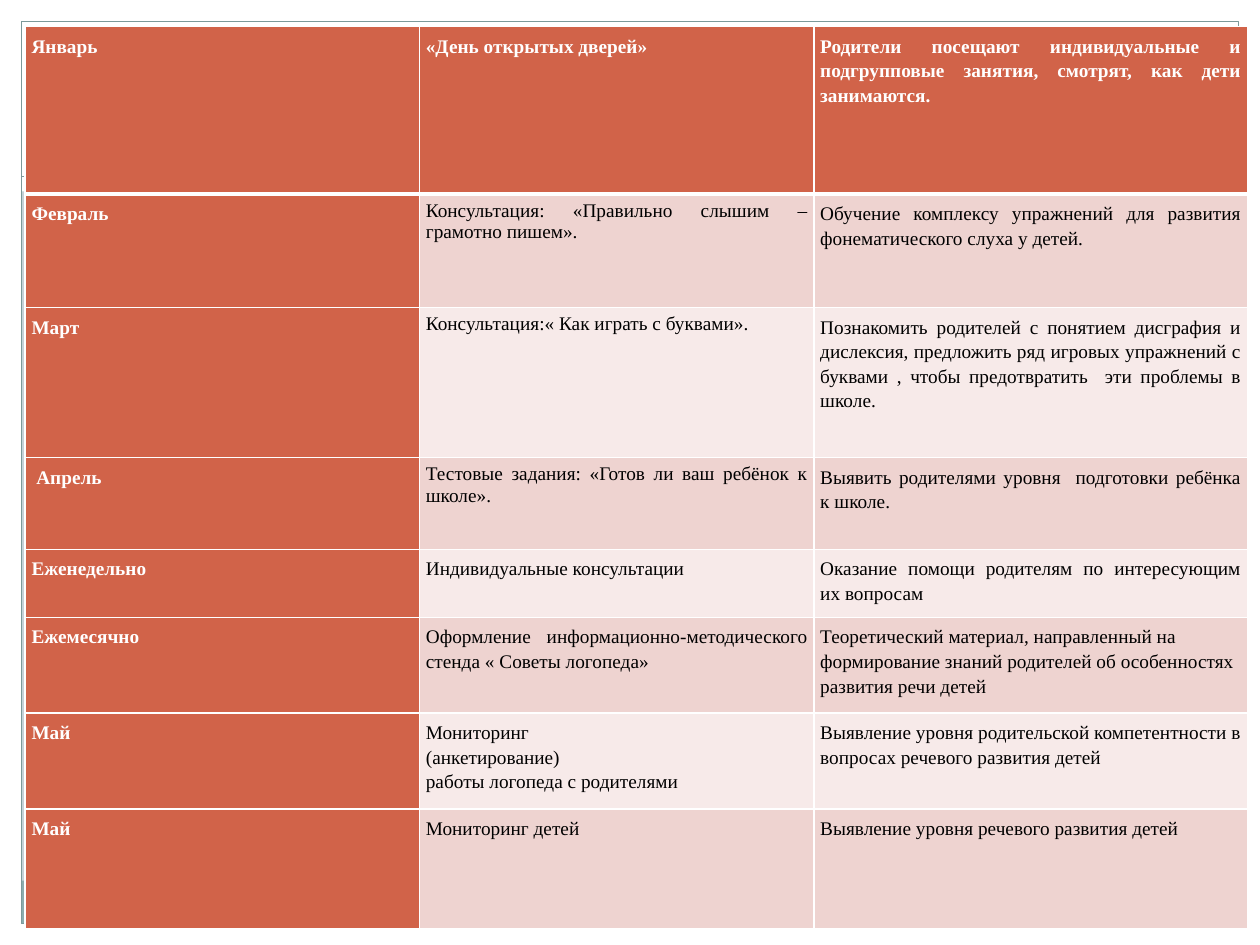
from lxml import etree
from pptx import Presentation
from pptx.dml.color import RGBColor
from pptx.enum.dml import MSO_LINE
from pptx.enum.shapes import MSO_CONNECTOR, MSO_SHAPE
from pptx.enum.text import PP_ALIGN
from pptx.oxml.ns import qn
from pptx.util import Inches, Pt

RECTANGLE = MSO_SHAPE.RECTANGLE
STRAIGHT = MSO_CONNECTOR.STRAIGHT
DASH = MSO_LINE.SQUARE_DOT
JUSTIFY, LEFT = PP_ALIGN.JUSTIFY, PP_ALIGN.LEFT

WIDTH, HEIGHT = 10, 7.5
MARGIN = 0.17
WHITE, BLACK, ACCENT = "FFFFFF", "000000", "D16349"
FRAME, FOOTER, BACKGROUND = "7C999A", "8CADAE", "C5D1D7"
BANDS = ("F7EAE9", "EED3D0")

COLUMN_WIDTHS = (3.13, 3.13, 3.44)
ROW_HEIGHTS = (1.33, 0.9, 1.19, 0.73, 0.54, 0.76, 0.76, 0.95)
PLAN = (
    ("Январь", "«День открытых дверей»",
     "Родители посещают индивидуальные и подгрупповые занятия, смотрят, как дети занимаются."),
    ("Февраль", "Консультация: «Правильно слышим – грамотно пишем».",
     "Обучение комплексу упражнений для развития фонематического слуха у детей."),
    ("Март", "Консультация:« Как играть с буквами».",
     "Познакомить родителей с понятием дисграфия и дислексия, предложить ряд игровых "
     "упражнений с буквами , чтобы предотвратить  эти проблемы в школе."),
    (" Апрель", "Тестовые задания: «Готов ли ваш ребёнок к школе».",
     "Выявить родителями уровня  подготовки ребёнка к школе."),
    ("Еженедельно", "Индивидуальные консультации",
     "Оказание помощи родителям по интересующим их вопросам"),
    ("Ежемесячно", "Оформление информационно-методического стенда « Советы логопеда»",
     "Теоретический материал, направленный на формирование знаний родителей "
     "об особенностях развития речи детей"),
    ("Май", "Мониторинг\n(анкетирование)\nработы логопеда с родителями",
     "Выявление уровня родительской компетентности в вопросах речевого развития детей"),
    ("Май", "Мониторинг детей", "Выявление уровня речевого развития детей"),
)
SINGLE_SPACED = {(1, 1), (2, 1), (3, 1)}
LEFT_ALIGNED = {(5, 2), (6, 1)}


def color(value):
    return RGBColor.from_string(value)


def add_rectangle(slide, box, fill=None, line=None):
    shape = slide.shapes.add_shape(RECTANGLE, *map(Inches, box))
    shape.shadow.inherit = False
    if fill:
        shape.fill.solid()
        shape.fill.fore_color.rgb = color(fill)
    else:
        shape.fill.background()
    if line:
        shape.line.color.rgb = color(line)
        shape.line.width = Pt(0.75)
    else:
        shape.line.fill.background()


def add_frame(slide, box):
    left, top, width, height = box
    right, bottom = left + width, top + height
    margins = (
        (0, bottom, WIDTH, MARGIN),
        (0, 0, WIDTH, 1.52),
        (0, 0, MARGIN, HEIGHT),
        (right, 0, MARGIN, HEIGHT),
    )
    for margin in margins:
        add_rectangle(slide, margin, fill=WHITE)
    add_rectangle(slide, (left, bottom - 0.34, width, 0.34), fill=FOOTER)
    add_rectangle(slide, box, line=FRAME)
    divider = slide.shapes.add_connector(STRAIGHT, *map(Inches, (left, 1.4, right, 1.4)))
    divider.line.color.rgb = color(FRAME)
    divider.line.width = Pt(0.75)
    divider.line.dash_style = DASH
    etree.SubElement(divider._element.spPr, qn("a:effectLst"))


def set_borders(cell, top, bottom):
    properties = cell._tc.get_or_add_tcPr()
    for side, width in (("L", 1), ("R", 1), ("T", top), ("B", bottom)):
        border = etree.SubElement(properties, qn(f"a:ln{side}"), w=str(Pt(width)))
        fill = etree.SubElement(border, qn("a:solidFill"))
        etree.SubElement(fill, qn("a:srgbClr"), val=WHITE)


def format_cell(cell, text, row, column):
    heading = row == 0 or column == 0
    set_borders(cell, 3 if row == 1 else 1, 3 if row == 0 else 1)
    cell.fill.solid()
    cell.fill.fore_color.rgb = color(ACCENT if heading else BANDS[row % 2])
    cell.margin_left = cell.margin_right = Inches(0.05)
    cell.margin_top = cell.margin_bottom = Inches(0.05)
    paragraph = cell.text_frame.paragraphs[0]
    paragraph.text = text
    paragraph.alignment = LEFT if (row, column) in LEFT_ALIGNED else JUSTIFY
    paragraph.line_spacing = 1.0 if (row, column) in SINGLE_SPACED else 1.15
    font = paragraph.font
    font.name = "Times New Roman"
    font.size = Pt(11)
    font.bold = heading
    font.color.rgb = color(WHITE if heading else BLACK)


def add_plan(slide, box):
    table = slide.shapes.add_table(len(PLAN), len(COLUMN_WIDTHS), *map(Inches, box)).table
    for column, width in zip(table.columns, COLUMN_WIDTHS):
        column.width = Inches(width)
    for row, height in zip(table.rows, ROW_HEIGHTS):
        row.height = Inches(height)
    for row, texts in enumerate(PLAN):
        for column, text in enumerate(texts):
            format_cell(table.cell(row, column), text, row, column)


def main():
    presentation = Presentation()
    presentation.slide_width = Inches(WIDTH)
    presentation.slide_height = Inches(HEIGHT)
    slide = presentation.slides.add_slide(presentation.slide_layouts[6])
    slide.background.fill.solid()
    slide.background.fill.fore_color.rgb = color(BACKGROUND)
    add_frame(slide, (MARGIN, MARGIN, WIDTH - 2 * MARGIN, HEIGHT - 2 * MARGIN))
    add_plan(slide, (0.2, 0.21, sum(COLUMN_WIDTHS), sum(ROW_HEIGHTS)))
    presentation.save("out.pptx")


if __name__ == "__main__":
    main()
